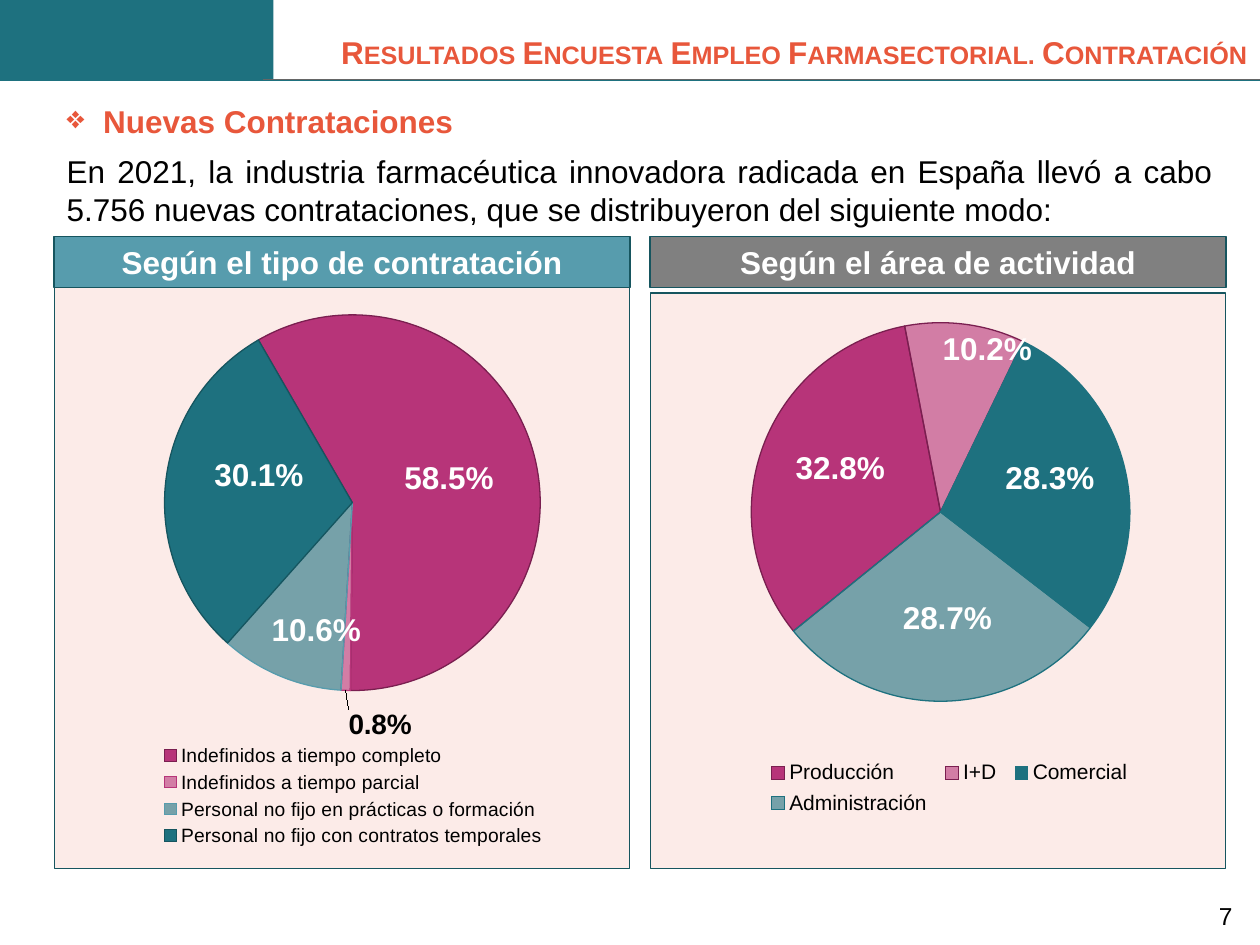
from lxml import etree
from pptx import Presentation
from pptx.chart.data import CategoryChartData
from pptx.dml.color import RGBColor
from pptx.enum.chart import XL_CHART_TYPE, XL_LABEL_POSITION, XL_LEGEND_POSITION
from pptx.enum.shapes import MSO_CONNECTOR, MSO_SHAPE
from pptx.enum.text import MSO_ANCHOR, MSO_AUTO_SIZE, PP_ALIGN
from pptx.oxml import parse_xml
from pptx.oxml.ns import nsdecls, qn
from pptx.util import Inches, Pt

PIE = XL_CHART_TYPE.PIE
BOTTOM = XL_LEGEND_POSITION.BOTTOM
CENTER_LABEL = XL_LABEL_POSITION.CENTER
OUTSIDE_LABEL = XL_LABEL_POSITION.OUTSIDE_END
RECTANGLE = MSO_SHAPE.RECTANGLE
STRAIGHT = MSO_CONNECTOR.STRAIGHT
LEFT, CENTER, RIGHT, JUSTIFY = PP_ALIGN.LEFT, PP_ALIGN.CENTER, PP_ALIGN.RIGHT, PP_ALIGN.JUSTIFY
MIDDLE = MSO_ANCHOR.MIDDLE
NO_AUTOFIT = MSO_AUTO_SIZE.NONE

FONT = "Arial"
TEAL = RGBColor(0x1E, 0x71, 0x7F)
DARK_TEAL = RGBColor(0x16, 0x55, 0x5F)
LIGHT_TEAL = RGBColor(0x57, 0x9C, 0xAD)
MAGENTA = RGBColor(0xB7, 0x34, 0x79)
DARK_MAGENTA = RGBColor(0x7A, 0x1F, 0x50)
ORANGE = RGBColor(0xE8, 0x57, 0x3B)
PINK = RGBColor(0xFC, 0xEB, 0xE8)
GRAY = RGBColor(0x80, 0x80, 0x80)
RULE_GRAY = RGBColor(0x66, 0x66, 0x66)
BLACK = RGBColor(0, 0, 0)
WHITE = RGBColor(255, 255, 255)

TITLE = "Resultados Encuesta Empleo Farmasectorial. Contratación"
SUBTITLE = "Nuevas Contrataciones"
INTRO = ("En 2021, la industria farmacéutica innovadora radicada en España llevó a cabo "
         "5.756 nuevas contrataciones, que se distribuyeron del siguiente modo:")
PAGE_NUMBER = "7"

# slices: name, value, fill, opacity %, outline, label shift (x, y), label outside
PANELS = [
    dict(
        heading="Según el tipo de contratación", heading_fill=LIGHT_TEAL,
        left=0.43, top=2.25, start=330, legend_size=11,
        plot=(0.191, 0.035, 0.654, 0.678), legend=(0.17, 0.78, 0.7, 0.19),
        slices=[
            ("Indefinidos a tiempo completo", 0.585, MAGENTA, 100, DARK_MAGENTA, (0.01, 0), False),
            ("Indefinidos a tiempo parcial", 0.008, MAGENTA, 60, MAGENTA, (0.06, 0.02), True),
            ("Personal no fijo en prácticas o formación", 0.106, TEAL, 60, LIGHT_TEAL,
             (0, 0.07), False),
            ("Personal no fijo con contratos temporales", 0.301, TEAL, 100, DARK_TEAL,
             (0, -0.03), False),
        ]),
    dict(
        heading="Según el área de actividad", heading_fill=GRAY,
        left=5.16, top=2.32, start=231, legend_size=12,
        plot=(0.175, 0.038, 0.659, 0.685), legend=(0.19, 0.8, 0.66, 0.12),
        slices=[
            ("Producción", 0.328, MAGENTA, 100, DARK_MAGENTA, (-0.02, -0.02), False),
            ("I+D", 0.102, MAGENTA, 60, DARK_MAGENTA, (0.06, -0.12), False),
            ("Comercial", 0.283, TEAL, 100, TEAL, (0.03, -0.02), False),
            ("Administración", 0.287, TEAL, 60, TEAL, (0.01, 0.02), False),
        ]),
]
PANEL_WIDTH, PANEL_BOTTOM = 4.57, 6.9
HEADING_TOP, HEADING_HEIGHT = 1.88, 0.4


def place(shape, left, top, width, height):
    shape.left, shape.top = Inches(left), Inches(top)
    shape.width, shape.height = Inches(width), Inches(height)


def style_font(font, size, color, bold=False):
    font.name, font.size, font.bold = FONT, Pt(size), bold
    font.color.rgb = color


def write(shape, text, size, color, align, bold=False):
    frame = shape.text_frame
    frame.word_wrap = True
    frame.auto_size = NO_AUTOFIT
    frame.vertical_anchor = MIDDLE
    para = frame.paragraphs[0]
    para.alignment = align
    span = para.add_run()
    span.text = text
    style_font(span.font, size, color, bold)
    return para, span


def add_text(slide, area, *style):
    box = slide.shapes.add_textbox(*map(Inches, area))
    return write(box, *style)


def add_rectangle(slide, area, fill, outline=None):
    shape = slide.shapes.add_shape(RECTANGLE, *map(Inches, area))
    shape.shadow.inherit = False
    shape.fill.solid()
    shape.fill.fore_color.rgb = fill
    if outline is None:
        shape.line.fill.background()
    else:
        shape.line.color.rgb = outline
        shape.line.width = Pt(0.75)
    return shape


def add_rule(slide, left, top, color):
    rule = slide.shapes.add_connector(STRAIGHT, Inches(left), Inches(top), Inches(10), Inches(top))
    rule.line.color.rgb = color
    rule.line.width = Pt(0.5)
    etree.SubElement(rule._element.spPr, qn("a:effectLst"))


def manual_layout(**values):
    parts = "".join(f'<c:{name} val="{value}"/>' for name, value in values.items())
    return parse_xml(f'<c:layout {nsdecls("c")}><c:manualLayout>{parts}</c:manualLayout></c:layout>')


def frame_layout(area, **target):
    x, y, w, h = area
    return manual_layout(**target, xMode="edge", yMode="edge", x=x, y=y, w=w, h=h)


def format_slice(series, index, item):
    name, value, fill, opacity, outline, (x, y), outside = item
    point = series.points[index]
    point.format.fill.solid()
    point.format.fill.fore_color.rgb = fill
    if opacity < 100:
        color = point.format.fill._xPr.find(".//" + qn("a:srgbClr"))
        etree.SubElement(color, qn("a:alpha")).set("val", str(opacity * 1000))
    point.format.line.color.rgb = outline
    point.format.line.width = Pt(0.75)
    label = point.data_label
    style_font(label.font, 16 if outside else 18, BLACK if outside else WHITE, True)
    label.position = OUTSIDE_LABEL if outside else CENTER_LABEL
    label_index = series._element.findall(".//" + qn("c:dLbl"))[index].find(qn("c:idx"))
    label_index.addnext(manual_layout(x=x, y=y))


def add_pie(slide, panel):
    data = CategoryChartData(number_format="0.0%")
    data.categories = [item[0] for item in panel["slices"]]
    data.add_series("Series 1", [item[1] for item in panel["slices"]])
    area = (panel["left"], panel["top"], PANEL_WIDTH, PANEL_BOTTOM - panel["top"])
    chart = slide.shapes.add_chart(PIE, *map(Inches, area), data).chart
    chart.has_title = False
    style_font(chart.font, 12, BLACK)
    chart.has_legend = True
    chart.legend.position = BOTTOM
    chart.legend.include_in_layout = False
    style_font(chart.legend.font, panel["legend_size"], BLACK)
    chart.legend._element.find(qn("c:legendPos")).addnext(frame_layout(panel["legend"]))

    plot = chart.plots[0]
    plot.vary_by_categories = True
    series = plot.series[0]
    labels = series.data_labels
    labels.show_value = True
    labels.number_format, labels.number_format_is_linked = "0.0%", False
    style_font(labels.font, 18, WHITE, True)
    for index, item in enumerate(panel["slices"]):
        format_slice(series, index, item)

    pie = plot._element
    for angle in pie.findall(qn("c:firstSliceAng")):
        pie.remove(angle)
    etree.SubElement(pie, qn("c:firstSliceAng")).set("val", str(panel["start"]))
    plot_area = pie.getparent()
    for layout in plot_area.findall(qn("c:layout")):
        plot_area.remove(layout)
    plot_area.insert(0, frame_layout(panel["plot"], layoutTarget="inner"))
    plot_area.getparent().addnext(parse_xml(
        f'<c:spPr {nsdecls("c", "a")}><a:solidFill><a:srgbClr val="{PINK}"/></a:solidFill>'
        f'<a:ln w="{Pt(0.75)}"><a:solidFill><a:srgbClr val="{DARK_TEAL}"/></a:solidFill></a:ln></c:spPr>'))


def main():
    deck = Presentation()
    deck.slide_width, deck.slide_height = Inches(10), Inches(7.5)
    slide = deck.slides.add_slide(deck.slide_layouts[5])

    add_rectangle(slide, (0, 0, 2.17, 0.64), TEAL)
    add_rule(slide, 2.09, 0.63, RULE_GRAY)
    add_rule(slide, 0, 0.64, TEAL)

    title = slide.shapes.title
    place(title, 2.24, 0.21, 7.76, 0.4)
    para, span = write(title, TITLE, 18, ORANGE, RIGHT, True)
    span._r.get_or_add_rPr().set("cap", "small")

    para, span = add_text(slide, (0.43, 0.76, 4.72, 0.4), SUBTITLE, 18, ORANGE, LEFT, True)
    bullet = para._p.get_or_add_pPr()
    bullet.set("marL", str(Inches(0.29)))
    bullet.set("indent", str(-Inches(0.29)))
    etree.SubElement(bullet, qn("a:buChar")).set("char", "❖")

    add_text(slide, (0.43, 1.15, 9.29, 0.71), INTRO, 18, BLACK, JUSTIFY)
    for panel in PANELS:
        add_pie(slide, panel)
        area = (panel["left"], HEADING_TOP, PANEL_WIDTH, HEADING_HEIGHT)
        heading = add_rectangle(slide, area, panel["heading_fill"], DARK_TEAL)
        write(heading, panel["heading"], 18, WHITE, CENTER, True)
    add_text(slide, (7.32, 7.06, 2.56, 0.42), PAGE_NUMBER, 14, BLACK, RIGHT)
    deck.save("out.pptx")


if __name__ == "__main__":
    main()
